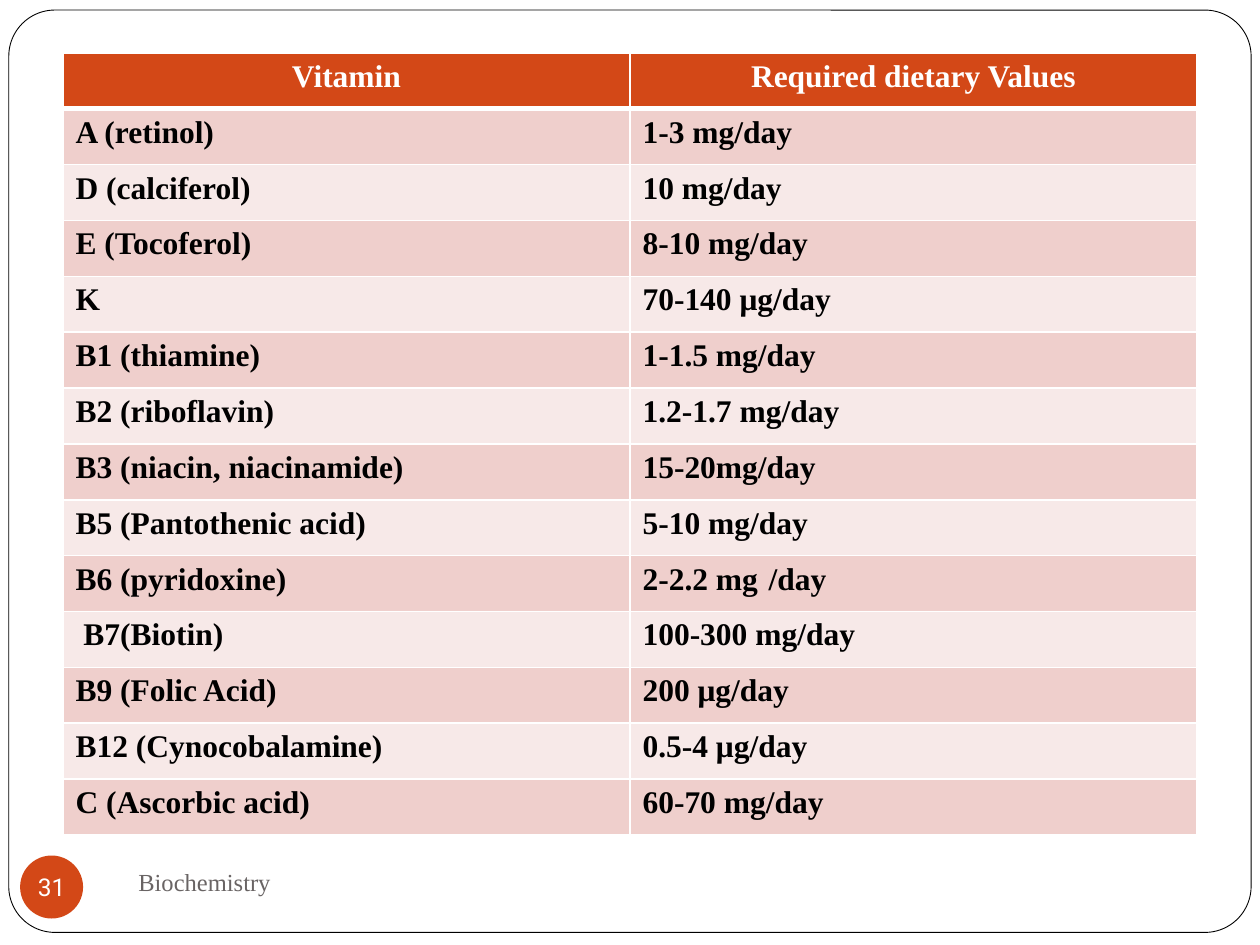
from lxml.etree import SubElement
from pptx import Presentation
from pptx.dml.color import RGBColor
from pptx.enum.shapes import MSO_SHAPE
from pptx.enum.text import MSO_ANCHOR, PP_ALIGN
from pptx.oxml import parse_xml
from pptx.oxml.ns import nsdecls, qn
from pptx.util import Inches, Pt

WHITE = RGBColor(0xFF, 0xFF, 0xFF)
BLACK = RGBColor(0, 0, 0)
GRAY = RGBColor(0x69, 0x64, 0x64)
RUST = RGBColor(0xD3, 0x48, 0x17)
ROSE = RGBColor(0xEF, 0xCF, 0xCC)
PALE = RGBColor(0xF7, 0xE9, 0xE8)
SERIF = "Times New Roman"
SANS = "Roboto"

HEADS = ("Vitamin", "Required dietary Values")
DOSES = (
    ("A (retinol)", "1-3 mg/day"),
    ("D (calciferol)", "10 mg/day"),
    ("E (Tocoferol)", "8-10 mg/day"),
    ("K", "70-140 μg/day"),
    ("B1 (thiamine)", "1-1.5 mg/day"),
    ("B2 (riboflavin)", "1.2-1.7 mg/day"),
    ("B3 (niacin, niacinamide)", "15-20mg/day"),
    ("B5 (Pantothenic acid)", "5-10 mg/day"),
    ("B6 (pyridoxine)", "2-2.2 mg\t/day"),
    (" B7(Biotin)", "100-300 mg/day"),
    ("B9 (Folic Acid)", "200 μg/day"),
    ("B12 (Cynocobalamine)", "0.5-4 μg/day"),
    ("C (Ascorbic acid)", "60-70 mg/day"),
)


class Deck:
    def __init__(self):
        self.show = Presentation()
        self.show.slide_width = Inches(10)
        self.show.slide_height = Inches(7.5)
        self.slide = self.show.slides.add_slide(self.show.slide_layouts[6])

    def put(self, frame, text, size, color, font=SERIF, bold=False, align=PP_ALIGN.LEFT):
        para = frame.paragraphs[0]
        para.alignment = align
        run = para.add_run()
        run.text = text
        run.font.name = font
        run.font.size = Pt(size)
        run.font.bold = bold
        run.font.color.rgb = color

    def shape(self, kind, box, fill):
        shape = self.slide.shapes.add_shape(kind, *map(Inches, box))
        shape.shadow.inherit = False
        shape.fill.solid()
        shape.fill.fore_color.rgb = fill
        shape.line.fill.background()
        return shape

    def frame(self, box):
        shape = self.shape(MSO_SHAPE.ROUNDED_RECTANGLE, box, WHITE)
        shape.adjustments[0] = 0.05
        shape.line.color.rgb = BLACK
        shape.line.width = Pt(0.5)

    def badge(self, box, text):
        frame = self.shape(MSO_SHAPE.OVAL, box, RUST).text_frame
        frame.margin_left = frame.margin_right = 0
        frame.margin_top = frame.margin_bottom = 0
        frame.word_wrap = False
        frame.vertical_anchor = MSO_ANCHOR.MIDDLE
        self.put(frame, text, 14, WHITE, SANS, align=PP_ALIGN.CENTER)

    def label(self, box, text):
        frame = self.slide.shapes.add_textbox(*map(Inches, box)).text_frame
        frame.word_wrap = True
        frame.vertical_anchor = MSO_ANCHOR.MIDDLE
        self.put(frame, text, 14, GRAY)

    def edge(self, cell, top, bottom):
        props = cell._tc.get_or_add_tcPr()
        sides = (("L", 1), ("R", 1), ("T", top), ("B", bottom))
        for spot, (side, width) in enumerate(sides):
            line = parse_xml(f'<a:ln{side} {nsdecls("a")} w="{Pt(width)}"/>')
            fill = SubElement(line, qn("a:solidFill"))
            SubElement(fill, qn("a:srgbClr"), val=str(WHITE))
            props.insert(spot, line)

    def cell(self, cell, text, fill, color, align, top=1, bottom=1):
        cell.fill.solid()
        cell.fill.fore_color.rgb = fill
        self.edge(cell, top, bottom)
        self.put(cell.text_frame, text, 18, color, bold=True, align=align)

    def table(self, box, heads, rows):
        size = len(rows) + 1, len(heads)
        table = self.slide.shapes.add_table(*size, *map(Inches, box)).table
        for col, text in enumerate(heads):
            self.cell(table.cell(0, col), text, RUST, WHITE, PP_ALIGN.CENTER, bottom=3)
        sides = PP_ALIGN.LEFT, PP_ALIGN.JUSTIFY
        for row, texts in enumerate(rows, 1):
            fill = ROSE if row % 2 else PALE
            top = 3 if row == 1 else 1
            for col, text in enumerate(texts):
                self.cell(table.cell(row, col), text, fill, BLACK, sides[col], top)


def main():
    deck = Deck()
    deck.frame((0.07, 0.08, 9.86, 7.32))
    deck.label((1, 6.75, 4.33, 0.5), "Biochemistry")
    deck.badge((0.16, 6.79, 0.5, 0.5), "31")
    deck.table((0.5, 0.42, 9, 6.21), HEADS, DOSES)
    deck.show.save("out.pptx")


if __name__ == "__main__":
    main()
